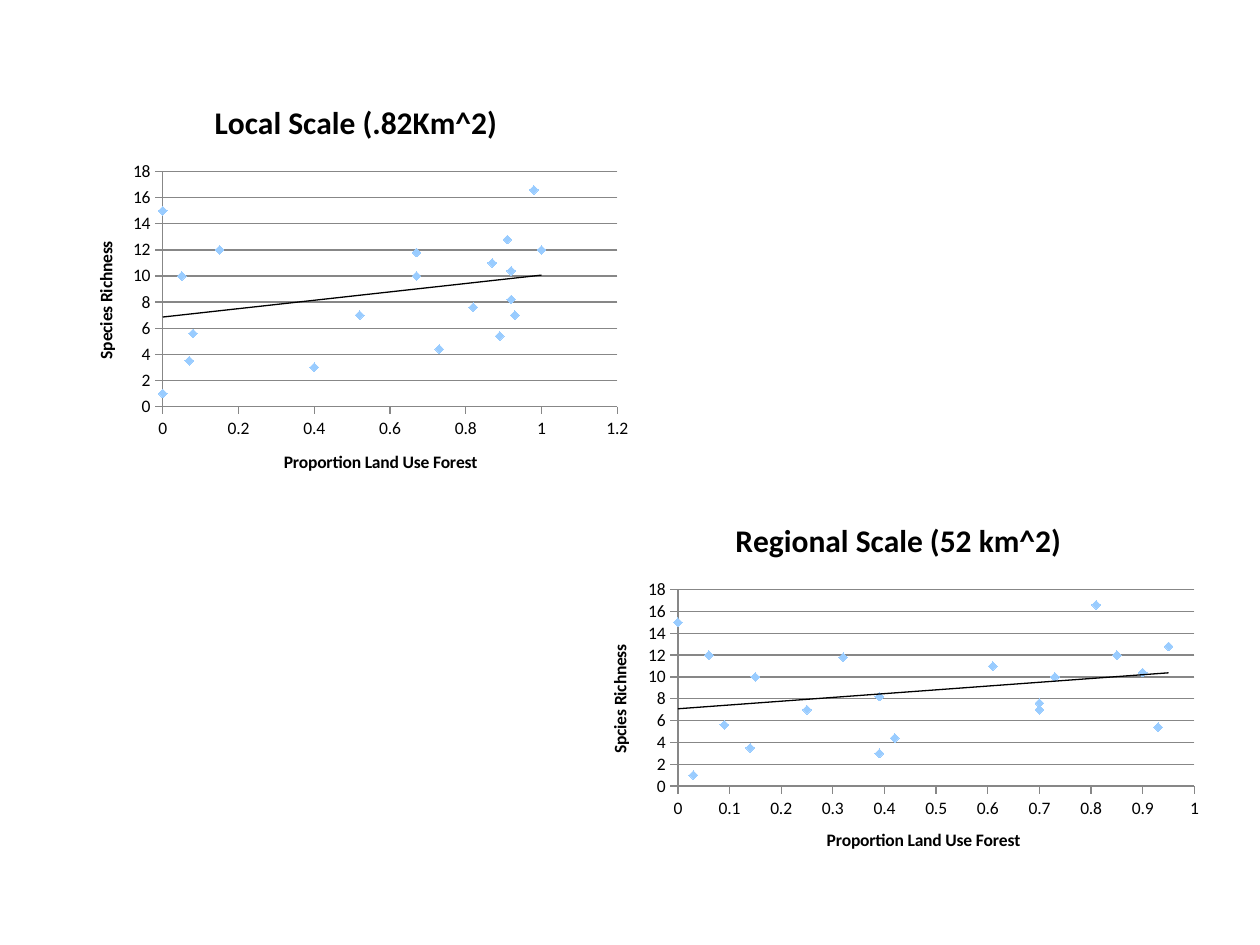
from lxml.etree import SubElement
from pptx import Presentation
from pptx.chart.data import XyChartData
from pptx.dml.color import RGBColor
from pptx.enum.chart import XL_CHART_TYPE as ChartType
from pptx.enum.chart import XL_MARKER_STYLE as MarkerStyle
from pptx.enum.chart import XL_TICK_MARK as TickMark
from pptx.oxml import parse_xml
from pptx.oxml.ns import nsdecls, qn
from pptx.util import Inches, Pt

BLACK = RGBColor(0x00, 0x00, 0x00)
GRAY = RGBColor(0x87, 0x87, 0x87)
LIGHT_BLUE = RGBColor(0x99, 0xCC, 0xFF)

RICHNESS = [8.2, 7, 16.6, 12, 15, 3.5, 12.8, 10.4, 11, 5.6,
            1, 4.4, 7.6, 11.8, 5.4, 3, 12, 10, 7, 10]
LOCAL_FOREST = [0.92, 0.93, 0.98, 0.15, 0, 0.07, 0.91, 0.92, 0.87, 0.08,
                0, 0.73, 0.82, 0.67, 0.89, 0.4, 1, 0.67, 0.52, 0.05]
REGIONAL_FOREST = [0.39, 0.7, 0.81, 0.06, 0, 0.14, 0.95, 0.9, 0.61, 0.09,
                   0.03, 0.42, 0.7, 0.32, 0.93, 0.39, 0.85, 0.73, 0.25, 0.15]


class ScatterSlide:
    font_name = "Calibri"
    text_size = Pt(10)
    title_size = Pt(18)
    line_width = Pt(0.75)

    def __init__(self, presentation):
        self.width = presentation.slide_width
        self.height = presentation.slide_height
        self.slide = presentation.slides.add_slide(presentation.slide_layouts[6])

    def style_font(self, font, size, bold):
        font.name = self.font_name
        font.size = size
        font.bold = bold
        font.color.rgb = BLACK

    def title(self, owner, text, size):
        run = owner.text_frame.paragraphs[0].add_run()
        run.text = text
        self.style_font(run.font, size, True)

    def line(self, line_format, color):
        line_format.color.rgb = color
        line_format.width = self.line_width

    def axis(self, axis, text, maximum, step, gridlines):
        axis.minimum_scale = 0
        axis.maximum_scale = maximum
        axis.major_unit = step
        axis.major_tick_mark = TickMark.OUTSIDE
        axis.minor_tick_mark = TickMark.NONE
        axis.has_major_gridlines = gridlines
        if gridlines:
            self.line(axis.major_gridlines.format.line, GRAY)
        self.line(axis.format.line, GRAY)
        self.style_font(axis.tick_labels.font, self.text_size, False)
        self.title(axis.axis_title, text, self.text_size)

    def plot_layout(self, chart, shares):
        plot_area = chart.plots[0]._element.getparent()
        for layout in plot_area.findall(qn("c:layout")):
            plot_area.remove(layout)
        layout = parse_xml(f"<c:layout {nsdecls('c')}/>")
        manual = SubElement(layout, qn("c:manualLayout"))
        settings = [("layoutTarget", "inner"), ("xMode", "edge"), ("yMode", "edge")]
        for name, value in settings + list(zip("xywh", shares)):
            SubElement(manual, qn(f"c:{name}")).set("val", str(value))
        plot_area.insert(0, layout)

    def trend_line(self, series):
        trend = parse_xml(
            f"<c:trendline {nsdecls('c', 'a')}>"
            f'<c:spPr><a:ln w="{int(self.line_width)}"><a:solidFill>'
            f'<a:srgbClr val="{BLACK}"/></a:solidFill></a:ln></c:spPr>'
            '<c:trendlineType val="linear"/><c:dispRSqr val="0"/>'
            '<c:dispEq val="0"/></c:trendline>')
        series._element.find(qn("c:xVal")).addprevious(trend)

    def scatter(self, box, title, forest, richness_title, maximum, step, plot):
        data = XyChartData()
        points = data.add_series("Series 1")
        for share, richness in zip(forest, RICHNESS):
            points.add_data_point(share, richness)
        left, top, width, height = box
        chart = self.slide.shapes.add_chart(
            ChartType.XY_SCATTER, int(left * self.width), int(top * self.height),
            int(width * self.width), int(height * self.height), data).chart
        self.style_font(chart.font, self.text_size, False)
        chart.has_legend = False
        chart.has_title = True
        self.title(chart.chart_title, title, self.title_size)
        chart.chart_title.include_in_layout = False
        self.axis(chart.category_axis, "Proportion Land Use Forest", maximum, step, False)
        self.axis(chart.value_axis, richness_title, 18, 2, True)
        self.plot_layout(chart, plot)
        chart.plots[0].vary_by_categories = False
        series = chart.plots[0].series[0]
        series.smooth = False
        series.format.line.fill.background()
        series.marker.style = MarkerStyle.DIAMOND
        series.marker.size = 5
        series.marker.format.fill.solid()
        series.marker.format.fill.fore_color.rgb = LIGHT_BLUE
        self.line(series.marker.format.line, LIGHT_BLUE)
        self.trend_line(series)


def main():
    presentation = Presentation()
    presentation.slide_width = Inches(10)
    presentation.slide_height = Inches(7.5)
    slide = ScatterSlide(presentation)
    slide.scatter((0.057, 0.084, 0.451, 0.444), "Local Scale (.82Km^2)", LOCAL_FOREST,
                  "Species Richness", 1.2, 0.2, (0.16, 0.22, 0.8, 0.56))
    slide.scatter((0.463, 0.528, 0.5, 0.4), "Regional Scale (52 km^2)", REGIONAL_FOREST,
                  "Spcies Richness", 1, 0.1, (0.15, 0.24, 0.82, 0.52))
    presentation.save("out.pptx")


if __name__ == "__main__":
    main()
